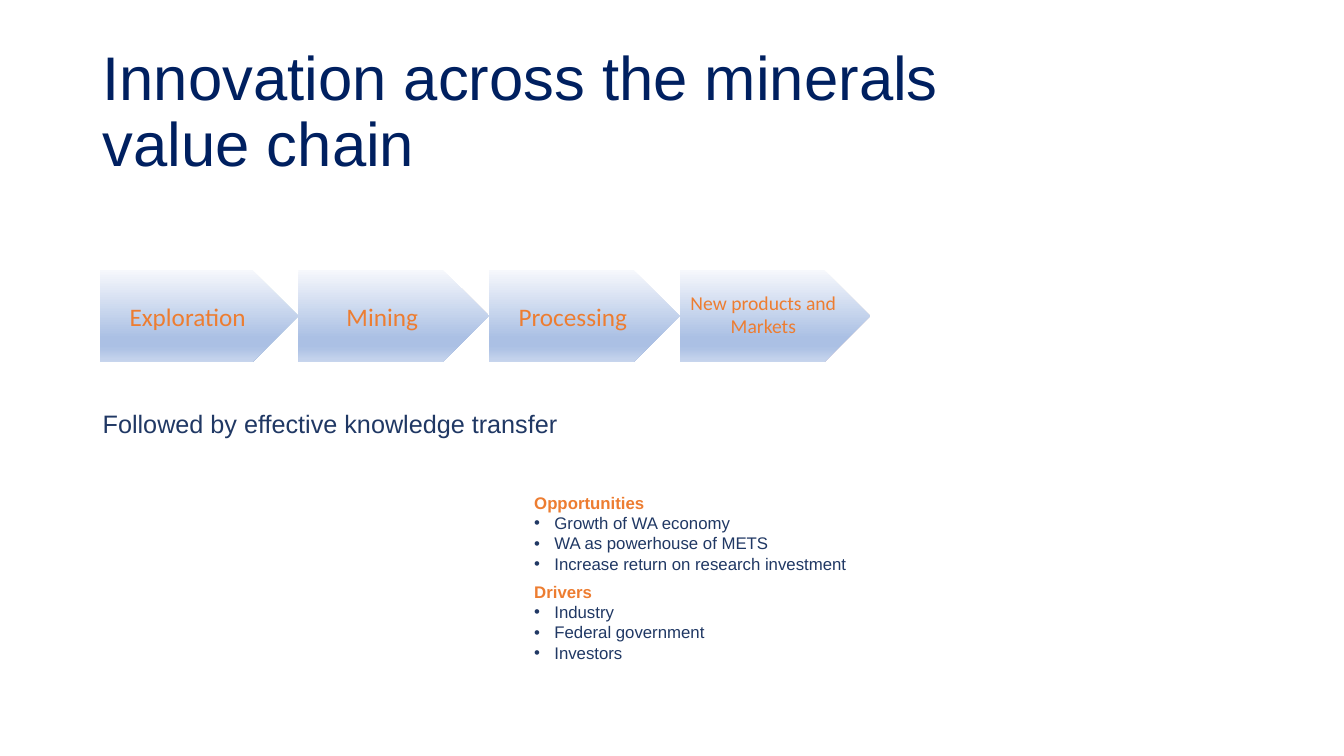
"""Build the slide on innovation across the minerals value chain."""
from copy import deepcopy

from lxml.etree import SubElement
from pptx import Presentation
from pptx.dml.color import RGBColor
from pptx.enum.shapes import MSO_SHAPE
from pptx.enum.text import MSO_ANCHOR, MSO_AUTO_SIZE, PP_ALIGN
from pptx.oxml.ns import qn
from pptx.util import Inches, Pt

NAVY, DARK_BLUE, ORANGE = "002060", "203864", "ED7D31"
TITLE = "Innovation across the minerals value chain"
SUBTITLE = "Followed by effective knowledge transfer"
STAGES = [
    ("Exploration", 1.97, 18, 0.05),
    ("Mining", 1.89, 18, 0.05),
    ("Processing", 1.89, 18, 0.05),
    ("New products and Markets", 1.89, 14, 0.09),
]
GRADIENT = [(0, "F6F8FC"), (0.74, "ABC0E4"), (0.83, "ABC0E4"), (1, "C7D5ED")]
SECTIONS = {
    "Opportunities": [
        "Growth of WA economy",
        "WA as powerhouse of METS",
        "Increase return on research investment",
    ],
    "Drivers": ["Industry", "Federal government", "Investors"],
}
CHAIN_LEFT, CHAIN_TOP, CHAIN_HEIGHT = 0.99, 2.68, 0.91
BULLET_INDENT = Inches(0.2)


def color(hex_value):
    return RGBColor.from_string(hex_value)


def write(paragraph, text, size, hex_value, name="Arial", bold=False):
    run = paragraph.add_run()
    run.text = text
    for attribute, value in {"size": Pt(size), "name": name, "bold": bold}.items():
        setattr(run.font, attribute, value)
    run.font.color.rgb = color(hex_value)


def add_text_frame(slide, left, top, width, height, **settings):
    box = slide.shapes.add_textbox(*map(Inches, (left, top, width, height)))
    for attribute, value in settings.items():
        setattr(box.text_frame, attribute, value)
    return box.text_frame


def fill_gradient(shape):
    shape.fill.gradient()
    shape.fill.gradient_angle = 270
    stop_list = shape.fill.gradient_stops[0]._gs.getparent()
    for _ in GRADIENT[2:]:
        stop_list.append(deepcopy(stop_list[0]))
    for stop, (position, hex_value) in zip(shape.fill.gradient_stops, GRADIENT):
        stop.position = position
        stop.color.rgb = color(hex_value)


def add_chain(slide):
    left = CHAIN_LEFT
    for label, width, size, bottom in STAGES:
        arrow = slide.shapes.add_shape(
            MSO_SHAPE.PENTAGON,
            *map(Inches, (left, CHAIN_TOP, width, CHAIN_HEIGHT)))
        arrow.shadow.inherit = False
        arrow.line.fill.background()
        fill_gradient(arrow)
        frame = arrow.text_frame
        frame.word_wrap = True
        frame.vertical_anchor = MSO_ANCHOR.MIDDLE
        frame.margin_bottom = Inches(bottom)
        frame.paragraphs[0].alignment = PP_ALIGN.CENTER
        write(frame.paragraphs[0], label, size, ORANGE, "Calibri")
        left += width


def add_bullet(paragraph):
    properties = paragraph._p.get_or_add_pPr()
    properties.set("marL", str(BULLET_INDENT))
    properties.set("indent", str(-BULLET_INDENT))
    SubElement(properties, qn("a:buFont"), typeface="Arial")
    SubElement(properties, qn("a:buChar"), char="•")


def add_sections(slide):
    frame = add_text_frame(slide, 5.2, 4.84, 3.32, 1.8, word_wrap=False,
                           auto_size=MSO_AUTO_SIZE.SHAPE_TO_FIT_TEXT)
    for index, (heading, items) in enumerate(SECTIONS.items()):
        paragraph = frame.add_paragraph() if index else frame.paragraphs[0]
        if index:
            paragraph.space_before = Pt(6)
        write(paragraph, heading, 12, ORANGE, bold=True)
        for item in items:
            paragraph = frame.add_paragraph()
            add_bullet(paragraph)
            write(paragraph, item, 12, DARK_BLUE)


def main():
    presentation = Presentation()
    presentation.slide_width = Inches(13.33)
    presentation.slide_height = Inches(7.5)
    slide = presentation.slides.add_slide(presentation.slide_layouts[6])
    title = add_text_frame(slide, 0.92, 0.4, 9.57, 1.45, word_wrap=True,
                           vertical_anchor=MSO_ANCHOR.MIDDLE)
    title.paragraphs[0].line_spacing = 0.9
    write(title.paragraphs[0], TITLE, 44, NAVY)
    add_chain(slide)
    add_sections(slide)
    subtitle = add_text_frame(slide, 0.92, 4, 8.31, 0.4, word_wrap=True,
                              auto_size=MSO_AUTO_SIZE.SHAPE_TO_FIT_TEXT)
    write(subtitle.paragraphs[0], SUBTITLE, 18, DARK_BLUE)
    presentation.save("out.pptx")


if __name__ == "__main__":
    main()
